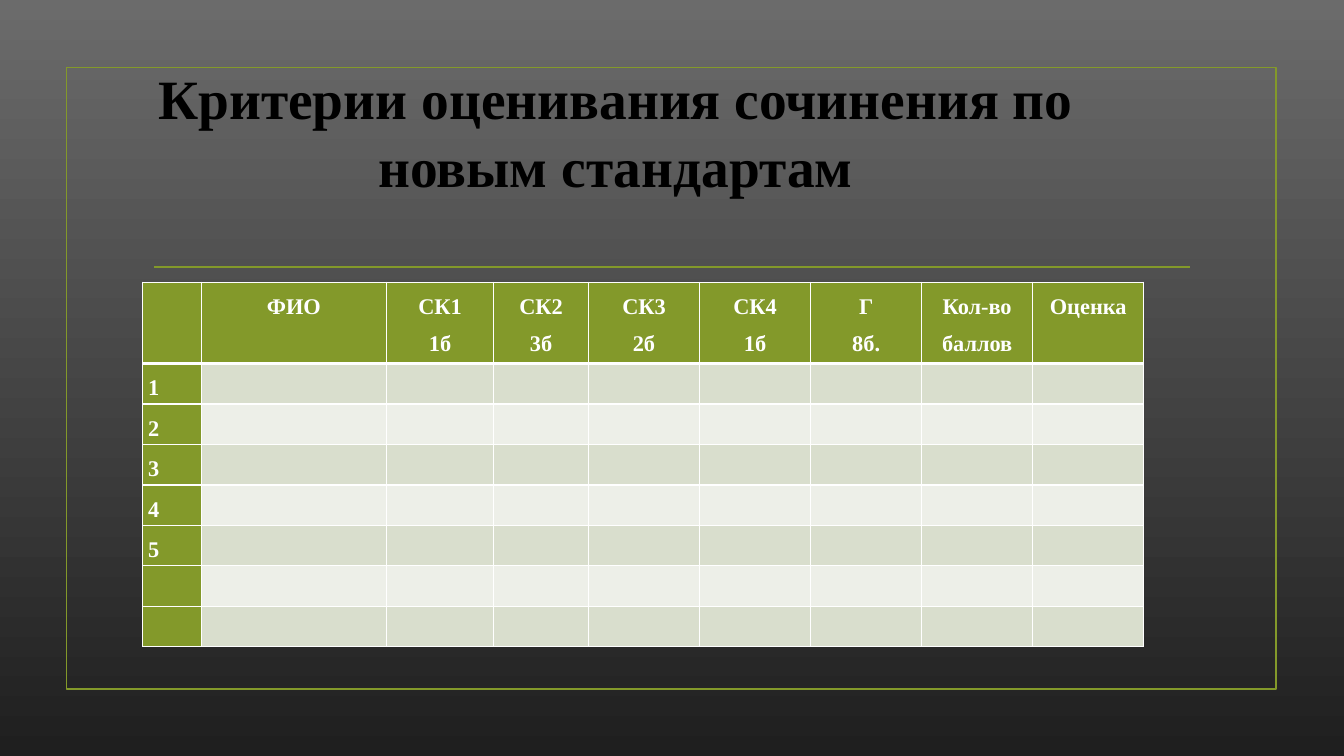
from dataclasses import dataclass

from lxml import etree
from pptx import Presentation
from pptx.dml.color import RGBColor
from pptx.enum import shapes, text
from pptx.oxml import ns
from pptx.util import Cm, Pt


@dataclass(frozen=True)
class Theme:
    font: str = "Times New Roman"
    title_size: float = 39.6
    table_size: float = 16
    accent: str = "83992A"
    title: str = "000000"
    light: str = "FFFFFF"
    bands: tuple = ("D9DECD", "EDEFE8")
    back: tuple = ("6B6B6B", "1F1F1F")
    line: float = 1.25


def rgb(value):
    return RGBColor.from_string(value)


class SlideBuilder:
    def __init__(self, prs, theme):
        self.theme = theme
        self.slide = prs.slides.add_slide(prs.slide_layouts[5])

    def background(self):
        fill = self.slide.background.fill
        fill.gradient()
        fill.gradient_angle = 270
        for stop, color, position in zip(fill.gradient_stops, self.theme.back, (0, 1)):
            stop.color.rgb = rgb(color)
            stop.position = position

    def outline(self, line):
        line.color.rgb = rgb(self.theme.accent)
        line.width = Pt(self.theme.line)

    def frame(self, left, top, width, height):
        sp = self.slide.shapes.add_shape(
            shapes.MSO_SHAPE.RECTANGLE, Cm(left), Cm(top), Cm(width), Cm(height))
        sp.shadow.inherit = False
        sp.fill.background()
        self.outline(sp.line)

    def rule(self, left, right, y):
        """Draw a horizontal line without a shadow."""
        line = self.slide.shapes.add_connector(
            shapes.MSO_CONNECTOR.STRAIGHT, Cm(left), Cm(y), Cm(right), Cm(y))
        self.outline(line.line)
        etree.SubElement(line._element.spPr, ns.qn("a:effectLst"))

    def format_font(self, font, size, color):
        font.name, font.size, font.bold = self.theme.font, Pt(size), True
        font.color.rgb = rgb(color)

    def title(self, words, left, top, width, height):
        sp = self.slide.shapes.title
        self.slide.shapes._spTree.append(sp._element)  # in front of the frame
        sp.left, sp.top, sp.width, sp.height = map(Cm, (left, top, width, height))
        tf = sp.text_frame
        tf.text = words
        tf.word_wrap = True
        tf.auto_size = text.MSO_AUTO_SIZE.NONE
        tf.vertical_anchor = text.MSO_ANCHOR.MIDDLE
        p = tf.paragraphs[0]
        p.alignment = text.PP_ALIGN.CENTER
        p.line_spacing = 1.03
        self.format_font(p.font, self.theme.title_size, self.theme.title)
        for r in p.runs:
            self.format_font(r.font, self.theme.title_size, self.theme.title)

    def borders(self, cell, top, bottom):
        props = cell._tc.get_or_add_tcPr()
        for side, width in zip("LRTB", (1, 1, top, bottom)):
            ln = etree.SubElement(props, ns.qn(f"a:ln{side}"), w=str(Pt(width)))
            fill = etree.SubElement(ln, ns.qn("a:solidFill"))
            etree.SubElement(fill, ns.qn("a:srgbClr"), val=self.theme.light)

    def cell(self, cell, words, fill, alignment):
        cell.fill.solid()
        cell.fill.fore_color.rgb = rgb(fill)
        cell.margin_left = cell.margin_right = Cm(0.13)
        cell.margin_top = cell.margin_bottom = 0
        cell.text_frame.text = words
        for p in cell.text_frame.paragraphs:
            p.alignment = alignment
            p.font.size = Pt(self.theme.table_size)
            if words:
                p.line_spacing = 1.5
            for r in p.runs:
                self.format_font(r.font, self.theme.table_size, self.theme.light)

    def table(self, left, top, widths, heights, header, labels):
        """Fill the header row and first column; band the empty cells."""
        table = self.slide.shapes.add_table(
            len(heights), len(widths), Cm(left), Cm(top),
            Cm(sum(widths)), Cm(sum(heights))).table
        for column, width in zip(table.columns, widths):
            column.width = Cm(width)
        for i, (row, height) in enumerate(zip(table.rows, heights)):
            row.height = Cm(height)
            for j, cell in enumerate(row.cells):
                self.borders(cell, 3 if i == 1 else 1, 3 if i == 0 else 1)
                if i == 0:
                    self.cell(cell, header[j], self.theme.accent, text.PP_ALIGN.CENTER)
                elif j == 0:
                    self.cell(cell, labels[i - 1], self.theme.accent, text.PP_ALIGN.LEFT)
                else:
                    self.cell(cell, "", self.theme.bands[(i - 1) % 2], text.PP_ALIGN.LEFT)


def main():
    prs = Presentation()
    prs.slide_width, prs.slide_height = Cm(33.87), Cm(19.05)
    s = SlideBuilder(prs, Theme())
    s.background()
    s.frame(1.68, 1.7, 30.48, 15.67)
    s.rule(3.89, 30, 6.73)
    s.title("Критерии оценивания сочинения по новым стандартам\v",
            2.18, 2.31, 26.67, 3.63)
    s.table(
        3.6, 7.11,
        widths=[1.47, 4.67, 2.7, 2.39] + [2.8] * 5,
        heights=[2.05] + [1.02] * 7,
        header=["", "ФИО", "СК1\n1б", "СК2\n3б", "СК3\n2б", "СК4\n1б", "Г\n8б.",
                "Кол-во баллов", "Оценка"],
        labels=["1", "2", "3", "4", "5", "", ""])
    prs.save("out.pptx")


if __name__ == "__main__":
    main()
